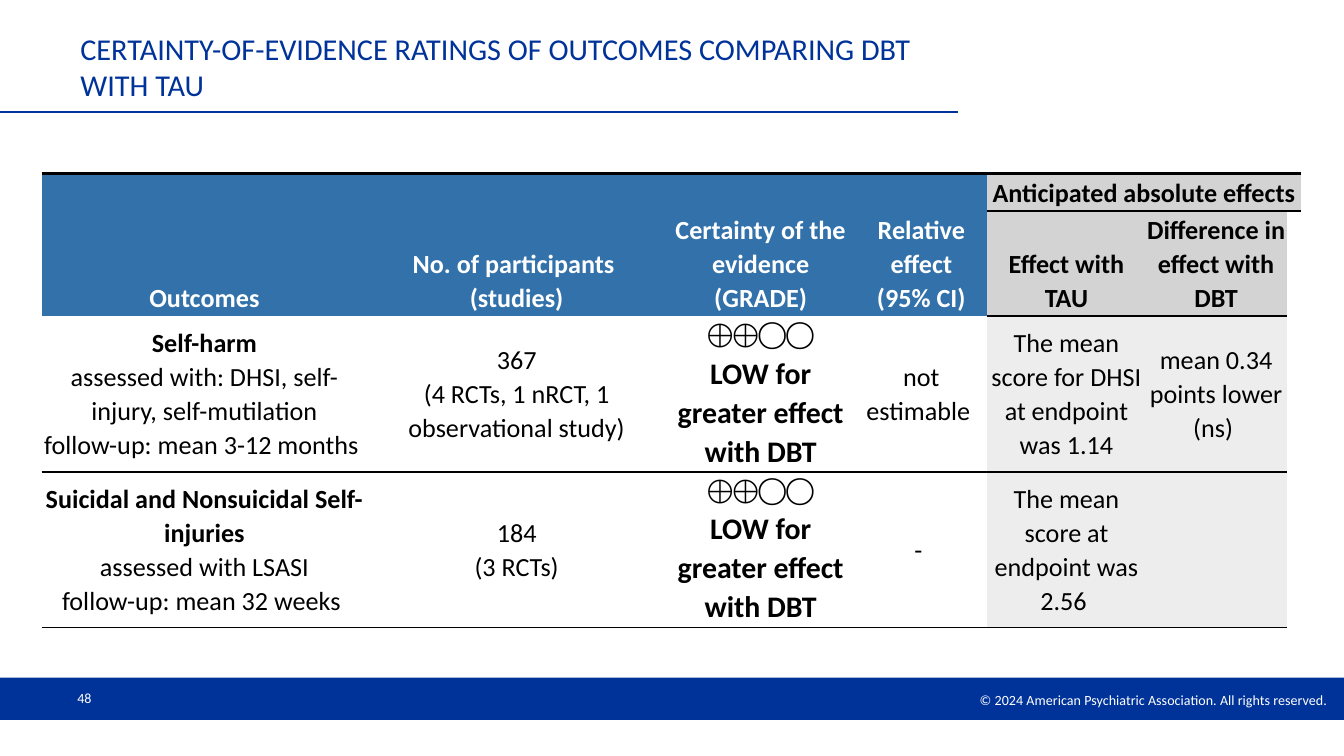
"""Build the slide on certainty-of-evidence ratings for DBT compared with TAU."""
from copy import deepcopy

from lxml.etree import SubElement
from pptx import Presentation
from pptx.dml.color import RGBColor
from pptx.enum.shapes import MSO_CONNECTOR, MSO_SHAPE
from pptx.enum.text import MSO_ANCHOR as ANCHOR, PP_ALIGN as ALIGN
from pptx.oxml.ns import qn
from pptx.util import Pt

NAVY = RGBColor(0x00, 0x33, 0x99)
BLUE = RGBColor(0x32, 0x71, 0xAA)
GRAY = RGBColor(0xD3, 0xD3, 0xD3)
PALE = RGBColor(0xED, 0xED, 0xED)
WHITE = RGBColor(0xFF, 0xFF, 0xFF)
BLACK = RGBColor(0x00, 0x00, 0x00)
NO_GRID_STYLE = "{2D5ABB26-0587-4C30-8999-92F81FD0307C}"


def add_text(p, text, size, color, bold=False, font="Calibri"):
    for i, line in enumerate(text.split("\n")):
        if i:
            p.add_line_break()
            p._p[-1].append(deepcopy(r._r.rPr))
        if line or not i:
            r = p.add_run()
            r.text = line
            r.font.name = font
            r.font.size = Pt(size)
            r.font.bold = bold
            r.font.color.rgb = color


def add_border(cell, side, width):
    ln = SubElement(cell._tc.get_or_add_tcPr(), qn(f"a:ln{side}"), w=str(Pt(width)))
    fill = SubElement(ln, qn("a:solidFill"))
    SubElement(fill, qn("a:srgbClr"), val=str(BLACK))


prs = Presentation()
prs.slide_width, prs.slide_height = Pt(720), Pt(405)
s = prs.slides.add_slide(prs.slide_layouts[6])

bar = s.shapes.add_shape(MSO_SHAPE.RECTANGLE, Pt(0), Pt(363), Pt(720), Pt(22.7))
bar.shadow.inherit = False
bar.fill.solid()
bar.fill.fore_color.rgb = NAVY
bar.line.fill.background()

rule = s.shapes.add_connector(MSO_CONNECTOR.STRAIGHT, Pt(0), Pt(60), Pt(513.2), Pt(60))
rule.line.color.rgb = NAVY
rule.line.width = Pt(0.75)
SubElement(rule._element.spPr, qn("a:effectLst"))

labels = [
    ("© 2024 American Psychiatric Association. All rights reserved.",
     405.4, 366.5, 312.6, 16.5, 7.5, WHITE, ALIGN.RIGHT, 7.2),
    ("48", 36, 363, 168, 21.6, 7.5, WHITE, ALIGN.LEFT, 5.4),
    ("CERTAINTY-OF-EVIDENCE RATINGS OF OUTCOMES COMPARING DBT WITH TAU",
     36, 18, 477.4, 35, 16.2, NAVY, ALIGN.LEFT, 7.2),
]
for text, x, y, w, h, size, color, align, inset in labels:
    tf = s.shapes.add_textbox(Pt(x), Pt(y), Pt(w), Pt(h)).text_frame
    tf.word_wrap = True
    tf.vertical_anchor = ANCHOR.MIDDLE
    tf.margin_left = tf.margin_right = Pt(inset)
    tf.margin_top = tf.margin_bottom = Pt(inset / 2)
    p = tf.paragraphs[0]
    p.alignment = align
    add_text(p, text, size, color)

widths = [174.5, 160, 101.5, 70.7, 84.8, 75.6, 7.5]
heights = [20.2, 56.2, 83.5, 83.5]
table = s.shapes.add_table(len(heights), len(widths), Pt(22.3), Pt(92.9),
                           Pt(sum(widths)), Pt(sum(heights))).table
table.first_row = table.horz_banding = False
table._tbl.tblPr.find(qn("a:tableStyleId")).text = NO_GRID_STYLE
for column, width in zip(table.columns, widths):
    column.width = Pt(width)
for row, height in zip(table.rows, heights):
    row.height = Pt(height)

for col in range(4):
    table.cell(0, col).merge(table.cell(1, col))
table.cell(0, 4).merge(table.cell(0, 6))

bold = {"size": 14, "bold": True}
plain = {"size": 14}
rating = [("⨁⨁◯◯\n", {"size": 16, "font": "Times New Roman"}),
          ("LOW for greater effect with DBT", {"size": 16, "bold": True})]
content = [
    [[(text, bold)] for text in (
        "Outcomes", "No. of participants \n(studies)",
        "Certainty of the evidence\n(GRADE)", "Relative effect\n(95% CI)",
        "Anticipated absolute effects")] + [[], []],
    [[], [], [], [], [("Effect with TAU", bold)],
     [("Difference in effect with DBT", bold)], []],
    [[("Self-harm\n", bold),
      ("assessed with: DHSI, self-injury, self-mutilation\n"
       "follow-up: mean 3-12 months ", plain)],
     [("367\n(4 RCTs, 1 nRCT, 1 observational study)", plain)],
     rating,
     [("not estimable ", plain)],
     [("The mean score for DHSI at endpoint was 1.14", plain)],
     [("mean 0.34 points lower\n(ns) ", plain)], []],
    [[("Suicidal and Nonsuicidal Self-injuries\n", bold),
      ("assessed with LSASI\nfollow-up: mean 32 weeks ", plain)],
     [("184\n(3 RCTs)", plain)],
     rating,
     [("- ", plain)],
     [("The mean score at endpoint was 2.56 ", plain)], [], []],
]

for row, line in enumerate(content):
    header = row < 2
    for col, runs in enumerate(line):
        cell = table.cell(row, col)
        cell.margin_left = cell.margin_right = Pt(0.7)
        cell.margin_top = cell.margin_bottom = Pt(0.7)
        cell.vertical_anchor = ANCHOR.BOTTOM if header else ANCHOR.MIDDLE

        if row == 0:
            add_border(cell, "T", 1.5)
        if (row == 0 and col > 3) or (row > 0 and col < 6):
            add_border(cell, "B", 1)

        if (header and col < 4) or 4 <= col < 6 or (row == 0 and col == 6):
            cell.fill.solid()
            cell.fill.fore_color.rgb = (PALE if not header else
                                        BLUE if col < 4 else GRAY)
        else:
            cell.fill.background()

        p = cell.text_frame.paragraphs[0]
        p.alignment = ALIGN.CENTER
        p.line_spacing = 1.07
        p.space_after = Pt(2 if header else 3)
        for text, style in runs:
            add_text(p, text, color=WHITE if header and col < 4 else BLACK, **style)

prs.save("out.pptx")
